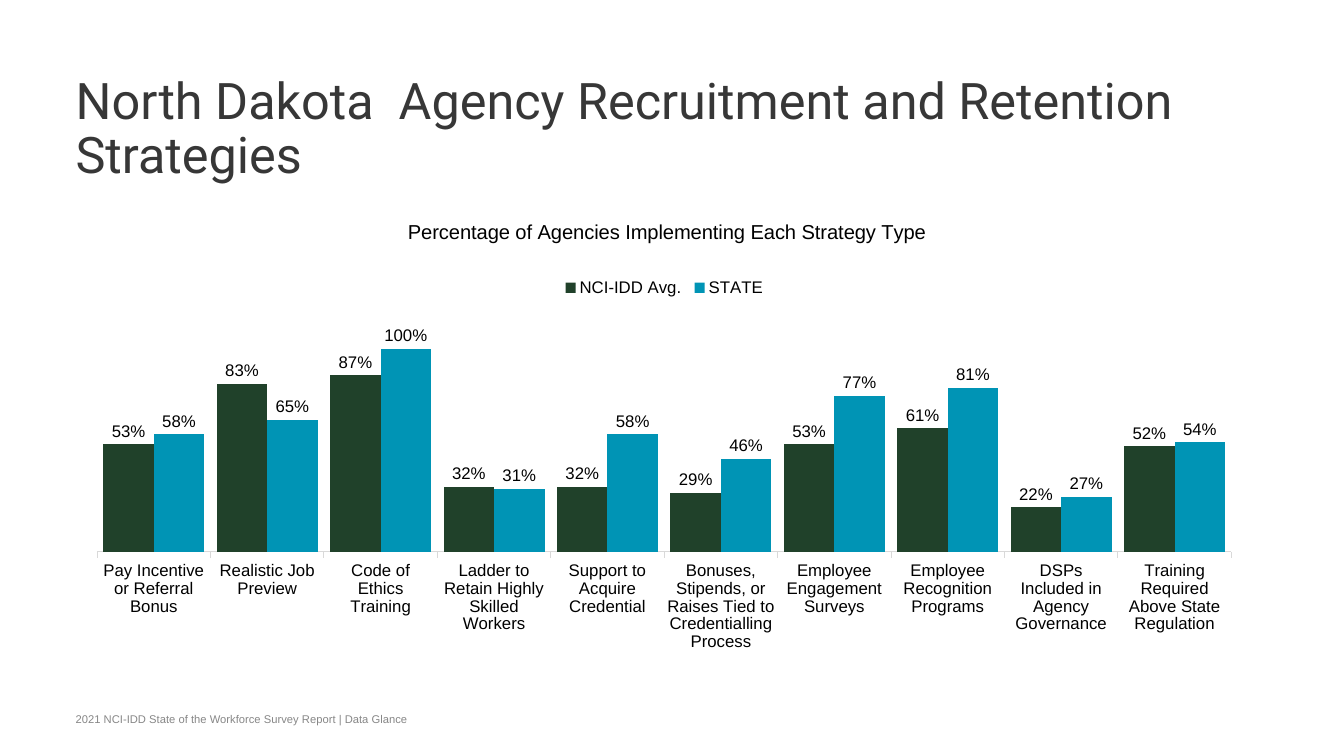
import pptx
import pptx.chart.data
import pptx.dml.color
import pptx.enum.chart
import pptx.enum.text
import pptx.oxml
import pptx.oxml.ns
import pptx.util

Pt = pptx.util.Pt
RATES = [
    ("Pay Incentive or Referral Bonus", 0.53, 0.58),
    ("Realistic Job Preview", 0.83, 0.65),
    ("Code of Ethics Training", 0.87, 1),
    ("Ladder to Retain Highly Skilled Workers", 0.32, 0.31),
    ("Support to Acquire Credential", 0.32, 0.58),
    ("Bonuses, Stipends, or Raises Tied to Credentialling Process", 0.29, 0.46),
    ("Employee Engagement Surveys", 0.53, 0.77),
    ("Employee Recognition Programs", 0.61, 0.81),
    ("DSPs Included in Agency Governance", 0.22, 0.27),
    ("Training Required Above State Regulation", 0.52, 0.54),
]
GROUPS = [("NCI-IDD Avg.", "20412A"), ("STATE", "0094B5")]


def color(text):
    return pptx.dml.color.RGBColor.from_string(text)


def style(font, size, tint="000000", face="Arial"):
    font.size = Pt(size)
    font.name = face
    font.bold = False
    font.color.rgb = color(tint)


def label(slide, box, text, size, tint, face, anchor, space=1.0):
    frame = slide.shapes.add_textbox(*map(Pt, box)).text_frame
    frame.word_wrap = True
    frame.vertical_anchor = anchor
    frame.margin_left = frame.margin_right = 0
    frame.margin_top = frame.margin_bottom = 0
    line = frame.paragraphs[0]
    line.text = text
    line.line_spacing = space
    style(line.font, size, tint, face)


def place(part, index, **spots):
    tag = pptx.oxml.ns.qn("c:layout")
    for old in part.findall(tag):
        part.remove(old)
    modes = "".join(f'<c:{key}Mode val="edge"/>' for key in "xy")
    sizes = "".join(f'<c:{key} val="{val}"/>' for key, val in spots.items())
    target = '<c:layoutTarget val="inner"/>' if index == 0 else ""
    space = pptx.oxml.ns.nsdecls("c")
    part.insert(index, pptx.oxml.parse_xml(
        f"<c:layout {space}><c:manualLayout>{target}{modes}{sizes}"
        "</c:manualLayout></c:layout>"))


def graph(slide, box):
    data = pptx.chart.data.CategoryChartData(number_format="0%")
    data.categories = [row[0] for row in RATES]
    for index, (name, tint) in enumerate(GROUPS, 1):
        data.add_series(name, [row[index] for row in RATES])
    kind = pptx.enum.chart.XL_CHART_TYPE.COLUMN_CLUSTERED
    chart = slide.shapes.add_chart(kind, *map(Pt, box), data).chart
    style(chart.font, 12)

    chart.has_title = True
    title = chart.chart_title
    title.include_in_layout = False
    line = title.text_frame.paragraphs[0]
    line.text = "Percentage of Agencies Implementing Each Strategy Type"
    style(line.font, 14.4)

    chart.has_legend = True
    chart.legend.position = pptx.enum.chart.XL_LEGEND_POSITION.TOP
    chart.legend.include_in_layout = False
    style(chart.legend.font, 12)

    axis = chart.category_axis
    axis.major_tick_mark = pptx.enum.chart.XL_TICK_MARK.OUTSIDE
    axis.format.line.color.rgb = color("D9D9D9")
    axis.format.line.width = Pt(0.75)
    style(axis.tick_labels.font, 12)
    scale = chart.value_axis
    scale.visible = False
    scale.has_major_gridlines = False
    scale.minimum_scale = 0
    scale.maximum_scale = 1.2

    plot = chart.plots[0]
    plot.gap_width = 25
    plot.overlap = 0
    plot.vary_by_categories = False
    for series, (name, tint) in zip(plot.series, GROUPS):
        series.format.fill.solid()
        series.format.fill.fore_color.rgb = color(tint)
        marks = series.data_labels
        marks.show_value = True
        marks.number_format = "0%"
        marks.number_format_is_linked = False
        marks.position = pptx.enum.chart.XL_LABEL_POSITION.OUTSIDE_END
        style(marks.font, 12)

    root = chart.element
    place(root.xpath(".//c:plotArea")[0], 0, x=0.02, y=0.24, w=0.96, h=0.525)
    place(root.xpath("./c:chart/c:title")[0], 1, x=0.28, y=0.04)
    place(root.xpath(".//c:legend")[0], 1, x=0.41, y=0.17, w=0.18, h=0.05)


def main():
    deck = pptx.Presentation()
    deck.slide_width = Pt(960)
    deck.slide_height = Pt(540)
    slide = deck.slides.add_slide(deck.slide_layouts[6])
    anchor = pptx.enum.text.MSO_ANCHOR
    graph(slide, (52.5, 141, 844, 331))
    label(slide, (54, 507.6, 566, 10.8),
          "2021 NCI-IDD State of the Workforce Survey Report | Data Glance",
          8, "878787", "Arial", anchor.BOTTOM)
    label(slide, (54, 54, 852, 86.4),
          "North Dakota  Agency Recruitment and Retention Strategies",
          36, "373737", "Roboto", anchor.TOP, 0.9)
    deck.save("out.pptx")


if __name__ == "__main__":
    main()
